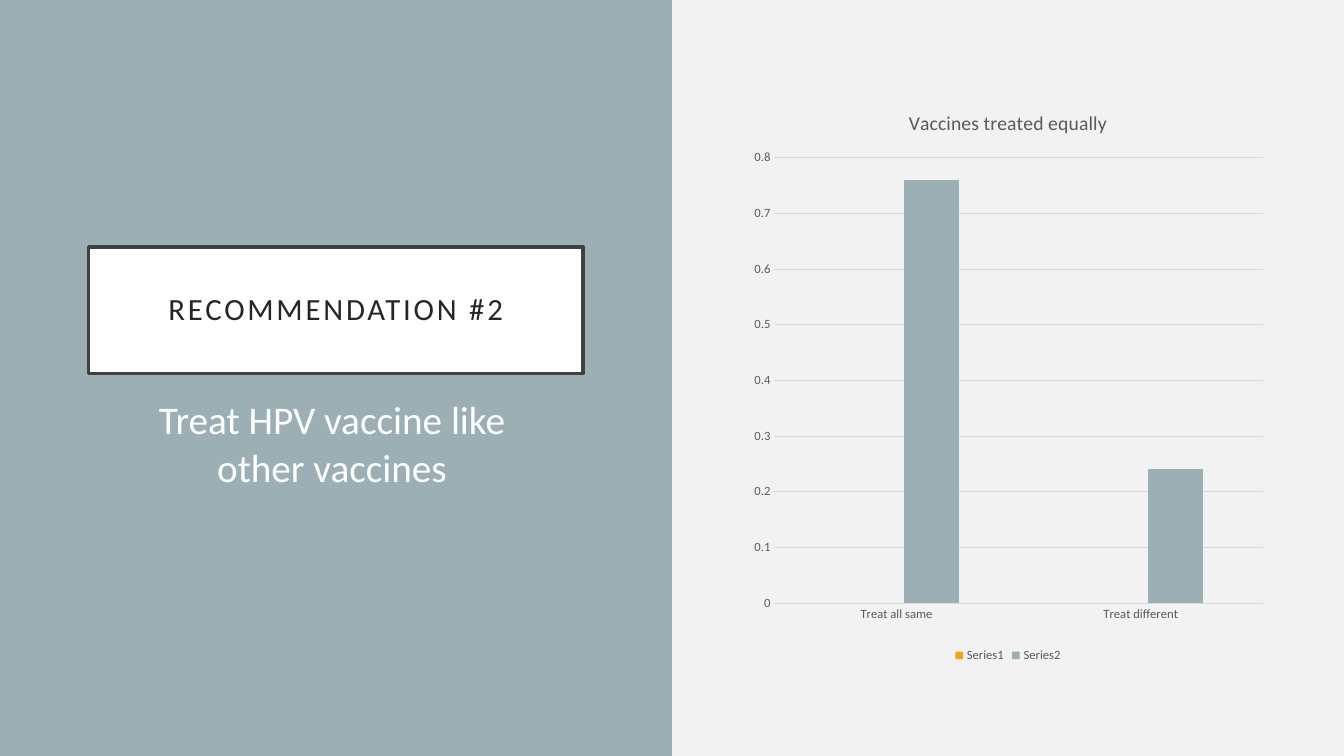
from pptx import Presentation
from pptx.chart.data import CategoryChartData
from pptx.dml.color import RGBColor
from pptx.enum.chart import XL_CHART_TYPE as ChartType, XL_LEGEND_POSITION as LegendPos, XL_TICK_MARK as Tick
from pptx.enum.shapes import MSO_SHAPE as Shape
from pptx.enum.text import MSO_ANCHOR as Anchor, PP_ALIGN as Align
from pptx.oxml import parse_xml
from pptx.oxml.ns import nsdecls
from pptx.util import Inches, Pt

SAGE = RGBColor(0x9B, 0xAF, 0xB5)
ORANGE = RGBColor(0xF6, 0xA2, 0x1D)
WHITE = RGBColor(0xFF, 0xFF, 0xFF)
PALE = RGBColor(0xF2, 0xF2, 0xF2)
FRAME = RGBColor(0x40, 0x40, 0x40)
INK = RGBColor(0x26, 0x26, 0x26)
GREY = RGBColor(0x59, 0x59, 0x59)
RULE = RGBColor(0xD9, 0xD9, 0xD9)
FONT = "Calibri"


def within(box, left, top, width, height):
    x, y, w, h = box
    return [int(n) for n in (x + left * w, y + top * h, width * w, height * h)]


def set_font(font, size, color):
    font.name, font.size, font.bold = FONT, Pt(size), False
    font.color.rgb = color


def add_rect(slide, box, fill):
    sp = slide.shapes.add_shape(Shape.RECTANGLE, *box)
    sp.shadow.inherit = False
    sp.fill.solid()
    sp.fill.fore_color.rgb = fill
    sp.line.fill.background()
    return sp


def write(tf, text, size, color):
    tf.word_wrap = True
    p = tf.paragraphs[0]
    p.alignment = Align.CENTER
    r = p.add_run()
    r.text = text
    set_font(p.font, size, color)
    return p


def add_message(slide, box, title, message):
    add_rect(slide, box, SAGE)

    sp = add_rect(slide, within(box, 0.132, 0.327, 0.736, 0.167), WHITE)
    sp.line.color.rgb = FRAME
    sp.line.width = Pt(2.5)
    tf = sp.text_frame
    tf.vertical_anchor = Anchor.MIDDLE
    tf.margin_left = tf.margin_right = tf.margin_top = tf.margin_bottom = Inches(0.2)
    p = write(tf, title, 22, INK)
    p.line_spacing = 0.9
    p.runs[0]._r.get_or_add_rPr().set("spc", "200")

    body = slide.shapes.add_textbox(*within(box, 0.183, 0.517, 0.622, 0.32))
    p = write(body.text_frame, message, 28, WHITE)
    p.space_before = Pt(10)


def add_results(slide, box, title, categories, series):
    data = CategoryChartData()
    data.categories = categories
    for name, values, _ in series:
        data.add_series(name, values)
    frame = within(box, 0.105, 0.117, 0.79, 0.765)
    chart = slide.shapes.add_chart(ChartType.COLUMN_CLUSTERED, *frame, data).chart
    set_font(chart.font, 9, GREY)

    chart.has_title = True
    tf = chart.chart_title.text_frame
    tf.text = title
    set_font(tf.paragraphs[0].font, 14, GREY)
    chart.chart_title.include_in_layout = False

    chart.has_legend = True
    chart.legend.position = LegendPos.BOTTOM
    chart.legend.include_in_layout = False

    plot = chart.plots[0]
    plot.vary_by_categories = False
    plot.gap_width, plot.overlap = 219, -27
    for ser, (_, _, color) in zip(plot.series, series):
        ser.format.fill.solid()
        ser.format.fill.fore_color.rgb = color

    cat, val = chart.category_axis, chart.value_axis
    for axis in (cat, val):
        axis.major_tick_mark = axis.minor_tick_mark = Tick.NONE
        set_font(axis.tick_labels.font, 9, GREY)
    val.minimum_scale, val.maximum_scale, val.major_unit = 0, 0.8, 0.1
    val.format.line.fill.background()
    for line in (cat.format.line, val.major_gridlines.format.line):
        line.color.rgb = RULE
        line.width = Pt(0.75)

    area = chart._chartSpace.chart.plotArea
    for old in area.findall("{*}layout"):
        area.remove(old)
    area.insert(0, parse_xml(
        f'<c:layout {nsdecls("c")}><c:manualLayout><c:layoutTarget val="inner"/>'
        '<c:xMode val="edge"/><c:yMode val="edge"/><c:x val="0.06"/><c:y val="0.12"/>'
        '<c:w val="0.92"/><c:h val="0.77"/></c:manualLayout></c:layout>'))


def main():
    prs = Presentation()
    prs.slide_width, prs.slide_height = Inches(13.33), Inches(7.5)
    slide = prs.slides.add_slide(prs.slide_layouts[6])
    slide.background.fill.solid()
    slide.background.fill.fore_color.rgb = PALE

    half, height = prs.slide_width // 2, prs.slide_height
    add_message(slide, (0, 0, half, height),
                "RECOMMENDATION #2", "Treat HPV vaccine like other vaccines")
    add_results(slide, (half, 0, half, height), "Vaccines treated equally",
                ["Treat all same", "Treat different"],
                [("Series1", (None, None), ORANGE), ("Series2", (0.76, 0.24), SAGE)])
    prs.save("out.pptx")


if __name__ == "__main__":
    main()
